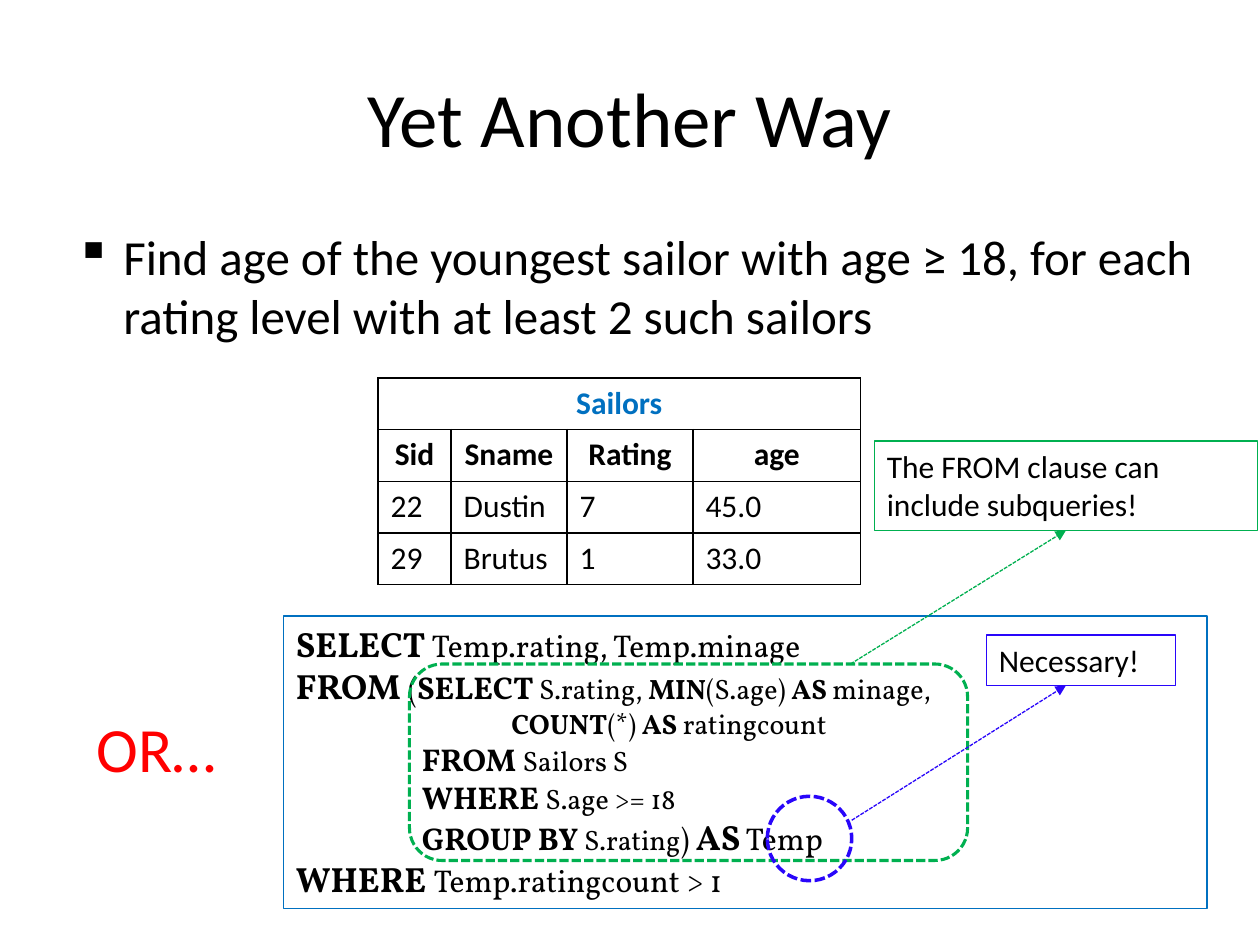
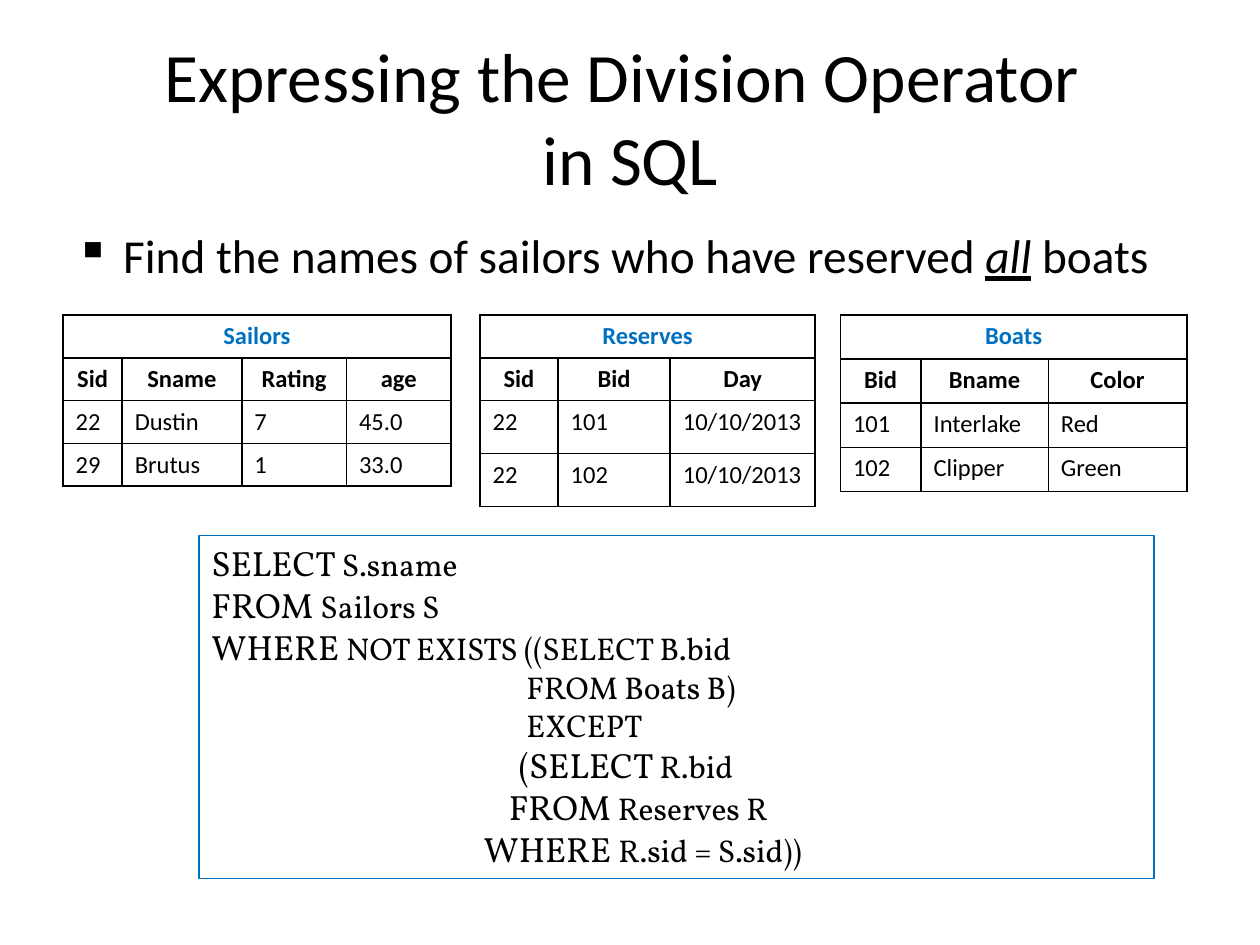
import pptx
import pptx.dml.color
import pptx.enum.dml
import pptx.enum.shapes
import pptx.enum.text
import pptx.oxml
import pptx.oxml.ns
import pptx.util

Inches, Pt = pptx.util.Inches, pptx.util.Pt
SHAPE = pptx.enum.shapes.MSO_SHAPE
ALIGN = pptx.enum.text.PP_ALIGN
ANCHOR = pptx.enum.text.MSO_ANCHOR
FIT = pptx.enum.text.MSO_AUTO_SIZE
DASH = pptx.enum.dml.MSO_LINE

COLORS = {"text": "000000", "heading": "0070C0", "subquery": "00B050",
          "alias": "2906FA", "alert": "FF0000"}
SANS, SERIF = "Calibri", "Vollkorn"
TITLE_BOX = (0.5, 0.3, 9, 1.25)

SAILORS = ("Sailors", [["Sid", "Sname", "Rating", "age"],
                       ["22", "Dustin", "7", "45.0"],
                       ["29", "Brutus", "1", "33.0"]])
RESERVES = ("Reserves", [["Sid", "Bid", "Day"],
                         ["22", "101", "10/10/2013"],
                         ["22", "102", "10/10/2013"]])
BOATS = ("Boats", [["Bid", "Bname", "Color"],
                   ["101", "Interlake", "Red"],
                   ["102", "Clipper", "Green"]])

# Each query line: indent in inches, then (text, size, bold) pieces
YOUNGEST_QUERY = [
    (0, [("SELECT ", 20, True), ("Temp.rating, Temp.minage", 18, False)]),
    (0, [("FROM ", 20, True), ("(", 18, False), ("SELECT ", 18, True),
         ("S.rating, ", 16, False), ("MIN", 16, True), ("(S.age) ", 16, False),
         ("AS ", 16, True), ("minage,", 16, False)]),
    (1.71, [("COUNT", 16, True), ("(*) ", 16, False), ("AS ", 16, True),
            ("ratingcount", 16, False)]),
    (1, [("FROM ", 18, True), ("Sailors S", 16, False)]),
    (1, [("WHERE ", 18, True), ("S.age >= 18", 16, False)]),
    (1, [("GROUP BY ", 18, True), ("S.rating", 16, False), (") ", 18, False),
         ("AS", 20, True), (" Temp", 18, False)]),
    (0, [("WHERE ", 20, True), ("Temp.ratingcount > 1", 18, False)]),
]
DIVISION_QUERY = [
    (0, [("SELECT ", 20, False), ("S.sname", 18, False)]),
    (0, [("FROM ", 20, False), ("Sailors S", 18, False)]),
    (0, [("WHERE ", 20, False), ("NOT EXISTS ((SELECT B.bid", 18, False)]),
    (2.5, [("FROM Boats B)", 18, False)]),
    (2.5, [("EXCEPT", 18, False)]),
    (2.44, [("(SELECT ", 20, False), ("R.bid", 18, False)]),
    (2.36, [("FROM ", 20, False), ("Reserves R", 18, False)]),
    (2.16, [("WHERE ", 20, False), ("R.sid = S.sid))", 18, False)]),
]


def rgb(color):
    return pptx.dml.color.RGBColor.from_string(COLORS[color])


def lengths(box):
    return [Inches(value) for value in box]


def style(run, size, font=SANS, color="text", bold=False):
    run.font.size = Pt(size)
    run.font.name = font
    run.font.color.rgb = rgb(color)
    run.font.bold = bold


def add_pieces(paragraph, pieces, font):
    for text, size, bold in pieces:
        run = paragraph.add_run()
        run.text = text
        style(run, size, font, bold=bold)


def add_text(slide, box, text, size, color="text", align=ALIGN.LEFT,
             anchor=ANCHOR.TOP, wrap=True):
    frame = slide.shapes.add_textbox(*lengths(box)).text_frame
    frame.word_wrap = wrap
    frame.vertical_anchor = anchor
    frame.text = text
    frame.paragraphs[0].alignment = align
    for run in frame.paragraphs[0].runs:
        style(run, size, color=color)
    return frame


def add_title(slide, text, size):
    add_text(slide, TITLE_BOX, text, size, align=ALIGN.CENTER, anchor=ANCHOR.MIDDLE)


def add_task(slide, box, text, size):
    """Bulleted statement of the query to write."""
    paragraph = add_text(slide, box, text, size).paragraphs[0]
    properties = paragraph._p.get_or_add_pPr()
    properties.set("marL", str(Inches(0.38)))
    properties.set("indent", str(-Inches(0.38)))
    bullet = pptx.oxml.parse_xml(
        f'<a:buChar {pptx.oxml.ns.nsdecls("a")} char="▪"/>')
    properties.append(bullet)
    return paragraph


def add_outline(slide, preset, box, color, width, dashed=False):
    outline = slide.shapes.add_shape(preset, *lengths(box))
    outline.shadow.inherit = False
    outline.fill.background()
    outline.line.color.rgb = rgb(color)
    outline.line.width = Pt(width)
    if dashed:
        outline.line.dash_style = DASH.SQUARE_DOT
    return outline


def add_callout(slide, box, text, color):
    callout = add_outline(slide, SHAPE.RECTANGLE, box, color, 0.75)
    frame = callout.text_frame
    frame.word_wrap = True
    frame.vertical_anchor = ANCHOR.TOP
    frame.text = text
    frame.paragraphs[0].alignment = ALIGN.LEFT
    for run in frame.paragraphs[0].runs:
        style(run, 18)
    return callout


def add_pointer(slide, start, end, color):
    pointer = slide.shapes.add_connector(
        pptx.enum.shapes.MSO_CONNECTOR.STRAIGHT, *lengths(start + end))
    pointer.line.color.rgb = rgb(color)
    pointer.line.width = Pt(0.75)
    pointer.line.dash_style = DASH.SQUARE_DOT
    namespace = pptx.oxml.ns.nsdecls("a")
    pointer.line._get_or_add_ln().append(
        pptx.oxml.parse_xml(f'<a:tailEnd {namespace} type="triangle"/>'))
    pointer._element.spPr.append(pptx.oxml.parse_xml(f"<a:effectLst {namespace}/>"))
    return pointer


def add_borders(cell):
    properties = cell._tc.get_or_add_tcPr()
    for position, side in enumerate("LRTB"):
        properties.insert(position, pptx.oxml.parse_xml(
            f'<a:ln{side} {pptx.oxml.ns.nsdecls("a")} w="{Pt(1)}"><a:solidFill>'
            f'<a:srgbClr val="{COLORS["text"]}"/></a:solidFill></a:ln{side}>'))


def add_relation(slide, left, top, relation, widths, heights, size):
    """Table with the relation's name over its column names and rows."""
    name, records = relation
    rows = [[name] + [""] * (len(widths) - 1)] + records
    table = slide.shapes.add_table(
        len(rows), len(widths),
        *lengths((left, top, sum(widths), sum(heights)))).table
    table.first_row = table.horz_banding = False
    for column, width in zip(table.columns, widths):
        column.width = Inches(width)
    for row, height in zip(table.rows, heights):
        row.height = Inches(height)
    table.cell(0, 0).merge(table.cell(0, len(widths) - 1))
    for r, values in enumerate(rows):
        for c, value in enumerate(values):
            cell = table.cell(r, c)
            cell.fill.background()
            add_borders(cell)
            if not value:
                continue
            cell.text = value
            paragraph = cell.text_frame.paragraphs[0]
            paragraph.alignment = ALIGN.CENTER if r < 2 else ALIGN.LEFT
            style(paragraph.runs[0], size, bold=r < 2,
                  color="heading" if r == 0 else "text")


def add_query(slide, box, lines, border):
    """Framed SQL statement."""
    frame = add_outline(slide, SHAPE.RECTANGLE, box, "heading", border).text_frame
    frame.word_wrap = True
    frame.auto_size = FIT.SHAPE_TO_FIT_TEXT
    frame.vertical_anchor = ANCHOR.TOP
    for number, (indent, pieces) in enumerate(lines):
        paragraph = frame.add_paragraph() if number else frame.paragraphs[0]
        paragraph.alignment = ALIGN.LEFT
        paragraph._p.get_or_add_pPr().set("marL", str(Inches(indent)))
        add_pieces(paragraph, pieces, SERIF)


def add_query_notes(slide, box):
    """Marks on the subquery and its alias, with callouts."""
    left, top = box[:2]

    def at(x, y):
        return (left + x, top + y)

    add_outline(slide, SHAPE.ROUNDED_RECTANGLE, at(1, 0.38) + (4.43, 1.56),
                "subquery", 1.75, dashed=True)
    from_note = add_callout(slide, at(4.69, -1.39) + (3.04, 0.71),
                            "The FROM clause can \vinclude subqueries!", "subquery")
    from_pointer = add_pointer(slide, at(4.5, 0.38), at(6.2, -0.68), "subquery")
    from_pointer.end_connect(from_note, 2)
    add_outline(slide, SHAPE.OVAL, at(3.84, 1.43) + (0.67, 0.67),
                "alias", 2, dashed=True)
    add_callout(slide, at(5.58, 0.15) + (1.5, 0.4), "Necessary!", "alias")
    add_pointer(slide, at(4.51, 1.62), at(6.21, 0.55), "alias")


def build_another_way(slide):
    add_title(slide, "Yet Another Way", 44)
    add_task(slide, (0.5, 1.75, 9.25, 1.1),
             "Find age of the youngest sailor with age ≥ 18, "
             "for each rating level with at least 2 such sailors", 28)
    add_relation(slide, 3, 3, SAILORS, [0.58, 0.92, 1, 1.33], [0.41] * 4, 18)
    query_box = (2.25, 4.89, 7.33, 2.32)
    add_query(slide, query_box, YOUNGEST_QUERY, 1)
    add_text(slide, (0.67, 5.58, 1.16, 0.71), "OR…", 36, "alert", wrap=False)
    add_query_notes(slide, query_box)


def build_division(slide):
    add_title(slide, "Expressing the Division Operator \vin SQL", 39.6)
    task = add_task(slide, (0.5, 1.75, 9, 0.6),
                    "Find the names of sailors who have reserved ", 27)
    add_pieces(task, [("all", 27, False), (" boats", 27, False)], SANS)
    task.runs[1].font.italic = task.runs[1].font.underline = True
    # Relations side by side
    top, size = 2.5, 14
    add_relation(slide, 0.5, top, SAILORS, [0.47, 0.95, 0.83, 0.83], [0.34] * 4, size)
    add_relation(slide, 3.81, top, RESERVES, [0.62, 0.89, 1.15],
                 [0.34, 0.34, 0.42, 0.42], size)
    add_relation(slide, 6.67, top, BOATS, [0.64, 1.01, 1.1], [0.35] * 4, size)
    add_query(slide, (1.58, 4.25, 7.58, 2.72), DIVISION_QUERY, 0.75)


def main():
    deck = pptx.Presentation()
    deck.slide_width, deck.slide_height = Inches(10), Inches(7.5)
    for build in (build_another_way, build_division):
        build(deck.slides.add_slide(deck.slide_layouts[6]))
    deck.save("out.pptx")


if __name__ == "__main__":
    main()
